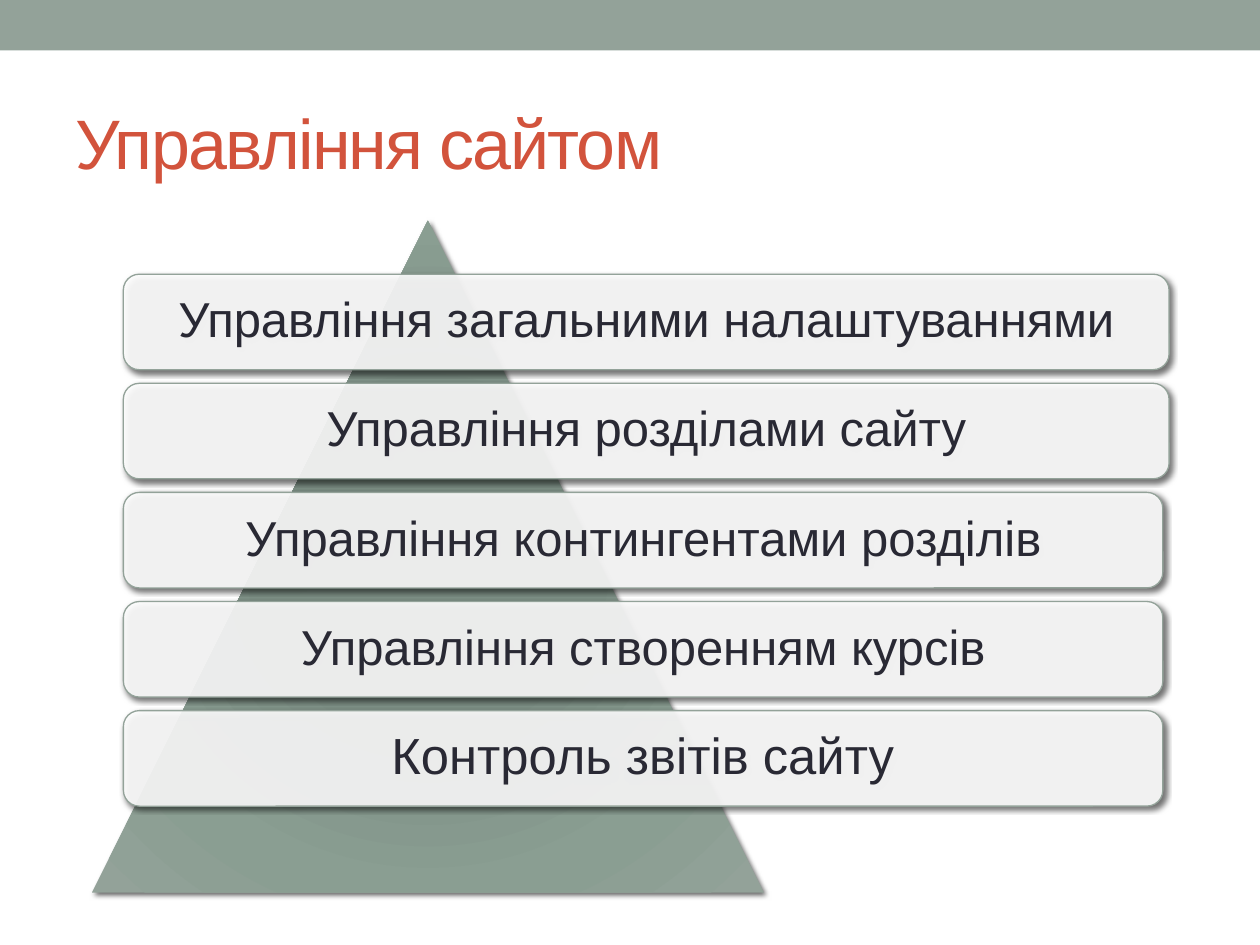
import pptx
import pptx.util
import pptx.dml.color
import pptx.enum.shapes
import pptx.enum.text
import pptx.oxml.ns
import pptx.oxml.xmlchemy

Pt = pptx.util.Pt
SHAPE = pptx.enum.shapes.MSO_SHAPE
MIDDLE = pptx.enum.text.MSO_ANCHOR.MIDDLE
ALIGN = pptx.enum.text.PP_ALIGN
qn = pptx.oxml.ns.qn
new_element = pptx.oxml.xmlchemy.OxmlElement

TITLE = "Управління сайтом"
# text, bar width, font size
BARS = [
    ("Управління загальними налаштуваннями", 597.6, 28),
    ("Управління розділами сайту", 597.6, 28),
    ("Управління контингентами розділів", 594, 28),
    ("Управління створенням курсів", 594, 28),
    ("Контроль звітів сайту", 594, 29),
]
COLORS = {"band": "93A299", "title": "D2533C", "bar": "FFFFFF",
          "text": "292934", "shadow": "000000"}
# position in percent, colour
PYRAMID_STOPS = [(0, "7B8E82"), (34, "7B8D83"), (70, "8A9E92"), (100, "93A299")]
BAR_LEFT, BAR_TOP, BAR_HEIGHT, BAR_PITCH = 70.5, 156.7, 54.6, 62.35
BAR_INSET = 8.64


def rgb(name):
    return pptx.dml.color.RGBColor.from_string(COLORS[name])


def make(parent, tag, **attrs):
    """Append a new XML element to parent and return it."""
    el = new_element(tag)
    for key, value in attrs.items():
        el.set(key, str(value))
    parent.append(el)
    return el


def add_shape(slide, kind, left, top, width, height):
    """Add a preset shape without line or shadow."""
    s = slide.shapes.add_shape(kind, Pt(left), Pt(top), Pt(width), Pt(height))
    s.shadow.inherit = False
    s.line.fill.background()
    return s


def add_shadow(s):
    effects = s._element.spPr.find(qn("a:effectLst"))
    outer = make(effects, "a:outerShdw", blurRad=int(Pt(3)), dist=int(Pt(2)),
                 dir=45 * 60000, rotWithShape=0)
    color = make(outer, "a:srgbClr", val=COLORS["shadow"])
    make(color, "a:alpha", val=60000)


def set_circle_gradient(s, stops):
    grad = new_element("a:gradFill")
    gs_list = make(grad, "a:gsLst")
    for pos, color in stops:
        make(make(gs_list, "a:gs", pos=pos * 1000), "a:srgbClr", val=color)
    circle = make(grad, "a:path", path="circle")
    make(circle, "a:fillToRect", l=100000, t=100000, r=100000, b=100000)
    s._element.spPr.find(qn("a:prstGeom")).addnext(grad)


def write(s, text, size, color, align):
    tf = s.text_frame
    tf.word_wrap = True
    tf.vertical_anchor = MIDDLE
    p = tf.paragraphs[0]
    p.alignment = align
    r = p.add_run()
    r.text = text
    p.font.name = "Arial"
    p.font.size = Pt(size)
    p.font.color.rgb = rgb(color)
    return p


def add_bar(slide, top, text, width, size):
    s = add_shape(slide, SHAPE.ROUNDED_RECTANGLE, BAR_LEFT, top, width, BAR_HEIGHT)
    s.fill.solid()
    s.fill.fore_color.rgb = rgb("bar")
    fill_color = s._element.spPr.find(qn("a:solidFill")).find(qn("a:srgbClr"))
    make(fill_color, "a:alpha", val=90000)
    s.line.color.rgb = rgb("band")
    s.line.width = Pt(0.75)
    add_shadow(s)
    tf = s.text_frame
    tf.margin_left = tf.margin_right = Pt(BAR_INSET)
    tf.margin_top = tf.margin_bottom = Pt(BAR_INSET)
    write(s, text, size, "text", ALIGN.CENTER).line_spacing = 0.9


def main():
    prs = pptx.Presentation()
    prs.slide_width, prs.slide_height = Pt(720), Pt(540)
    slide = prs.slides.add_slide(prs.slide_layouts[6])

    band = add_shape(slide, SHAPE.RECTANGLE, 0, 0, 720, 28.8)
    band.fill.solid()
    band.fill.fore_color.rgb = rgb("band")

    title = slide.shapes.add_textbox(Pt(36), Pt(42), Pt(648), Pt(78))
    p = write(title, TITLE, 40, "title", ALIGN.LEFT)
    p.runs[0].font._element.set("spc", "-100")

    pyramid = add_shape(slide, SHAPE.ISOSCELES_TRIANGLE, 52.5, 126, 384, 384)
    set_circle_gradient(pyramid, PYRAMID_STOPS)
    add_shadow(pyramid)

    for i, bar in enumerate(BARS):
        add_bar(slide, BAR_TOP + i * BAR_PITCH, *bar)

    prs.save("out.pptx")


if __name__ == "__main__":
    main()
